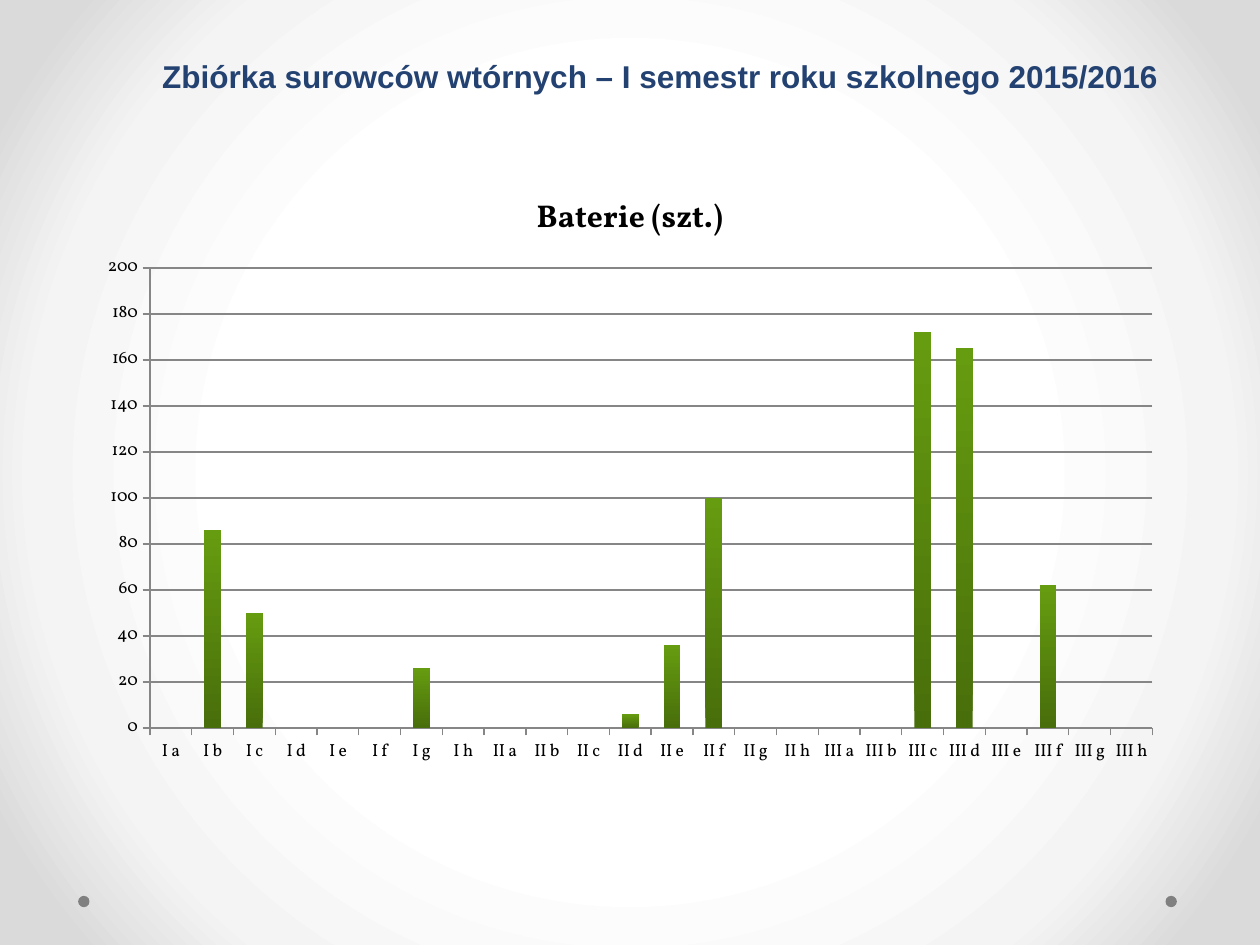
from lxml.etree import SubElement
from pptx import Presentation
from pptx.chart.data import CategoryChartData
from pptx.dml.color import RGBColor
from pptx.enum.chart import XL_CHART_TYPE, XL_TICK_MARK
from pptx.enum.shapes import MSO_SHAPE
from pptx.enum.text import MSO_ANCHOR, PP_ALIGN
from pptx.oxml import parse_xml
from pptx.oxml.ns import nsdecls, qn
from pptx.util import Inches, Pt

HEADING = "Zbiórka surowców wtórnych – I semestr roku szkolnego 2015/2016"
CHART_TITLE = "Baterie (szt.)"
YEARS = ["I", "II", "III"]
GROUPS = "abcdefgh"
COLLECTED = {
    "I b": 86, "I c": 50, "I g": 26,
    "II d": 6, "II e": 36, "II f": 100,
    "III c": 172, "III d": 165, "III f": 62,
}
BACKGROUND_STOPS = [(50, "FFFFFF"), (76, "F4F4F4"), (92, "DADADA")]
PLOT_SHARES = {"x": 0.058, "y": 0.163, "w": 0.923, "h": 0.756}
DOT_LEFTS = [0.62, 9.25]

NAVY = RGBColor(0x23, 0x42, 0x71)
BLACK = RGBColor(0, 0, 0)
GRAY = RGBColor(0x80, 0x80, 0x80)
GRID_GRAY = RGBColor(0x86, 0x86, 0x86)
DARK_GREEN = RGBColor(0x48, 0x6E, 0x0B)
GREEN = RGBColor(0x66, 0x9C, 0x10)


def paint_background(slide):
    slide.background.fill.solid()
    properties = slide.background._cSld.bg.bgPr
    stops = "".join(
        f'<a:gs pos="{share * 1000}"><a:srgbClr val="{color}"/></a:gs>'
        for share, color in BACKGROUND_STOPS
    )
    gradient = parse_xml(
        f'<a:gradFill {nsdecls("a")} rotWithShape="1"><a:gsLst>{stops}</a:gsLst>'
        '<a:path path="circle"><a:fillToRect l="50000" t="50000" r="50000" b="50000"/>'
        "</a:path></a:gradFill>"
    )
    properties.replace(properties.find(qn("a:solidFill")), gradient)


def add_dots(slide):
    for left in DOT_LEFTS:
        dot = slide.shapes.add_shape(
            MSO_SHAPE.OVAL, Inches(left), Inches(7.11), Inches(0.09), Inches(0.09)
        )
        dot.shadow.inherit = False
        dot.fill.solid()
        dot.fill.fore_color.rgb = GRAY
        dot.line.fill.background()


def add_heading(slide):
    heading = slide.shapes.title
    heading.left, heading.top = Inches(0.83), Inches(0.36)
    heading.width, heading.height = Inches(8.82), Inches(0.89)
    frame = heading.text_frame
    frame.word_wrap = True
    frame.vertical_anchor = MSO_ANCHOR.TOP
    paragraph = frame.paragraphs[0]
    paragraph.alignment = PP_ALIGN.CENTER
    paragraph.line_spacing = 1.15
    paragraph.space_after = Pt(10)
    run = paragraph.add_run()
    run.text = HEADING
    run.font.name = "Arial"
    run.font.size = Pt(18)
    run.font.bold = True
    run.font.color.rgb = NAVY


def style_font(font, size):
    font.name = "Vollkorn"
    font.size = Pt(size)
    font.color.rgb = BLACK


def place_plot(chart):
    plot_area = chart._chartSpace.chart.plotArea
    layout = plot_area.find(qn("c:layout"))
    if layout is None:
        layout = parse_xml(f'<c:layout {nsdecls("c")}/>')
        plot_area.insert(0, layout)
    manual = SubElement(layout, qn("c:manualLayout"))
    settings = {"layoutTarget": "inner", "xMode": "edge", "yMode": "edge", **PLOT_SHARES}
    for tag, value in settings.items():
        SubElement(manual, qn(f"c:{tag}")).set("val", str(value))


def add_battery_chart(slide):
    classes = [f"{year} {group}" for year in YEARS for group in GROUPS]
    data = CategoryChartData()
    data.categories = classes
    data.add_series(CHART_TITLE, [COLLECTED.get(name, 0) for name in classes])
    chart = slide.shapes.add_chart(
        XL_CHART_TYPE.COLUMN_CLUSTERED,
        Inches(0.69), Inches(1.34), Inches(8.62), Inches(4.83), data,
    ).chart
    style_font(chart.font, 10)
    chart.has_legend = False
    chart.has_title = True
    title_run = chart.chart_title.text_frame.paragraphs[0].add_run()
    title_run.text = CHART_TITLE
    style_font(title_run.font, 18)
    title_run.font.bold = True

    for axis in (chart.category_axis, chart.value_axis):
        axis.major_tick_mark = XL_TICK_MARK.OUTSIDE
        axis.minor_tick_mark = XL_TICK_MARK.NONE
        axis.format.line.color.rgb = GRID_GRAY
        axis.format.line.width = Pt(0.75)
        style_font(axis.tick_labels.font, 10)
    amounts = chart.value_axis
    amounts.minimum_scale, amounts.maximum_scale, amounts.major_unit = 0, 200, 20
    amounts.has_major_gridlines = True
    amounts.major_gridlines.format.line.color.rgb = GRID_GRAY
    amounts.major_gridlines.format.line.width = Pt(0.75)

    columns = chart.plots[0]
    columns.gap_width = 150
    columns.vary_by_categories = False
    fill = columns.series[0].format.fill
    fill.gradient()
    fill.gradient_angle = 90
    for stop, color in zip(fill.gradient_stops, (DARK_GREEN, GREEN)):
        stop.color.rgb = color
    place_plot(chart)


def main():
    deck = Presentation()
    deck.slide_width, deck.slide_height = Inches(10), Inches(7.5)
    slide = deck.slides.add_slide(deck.slide_layouts[5])
    paint_background(slide)
    add_dots(slide)
    add_heading(slide)
    add_battery_chart(slide)
    deck.save("out.pptx")


if __name__ == "__main__":
    main()
